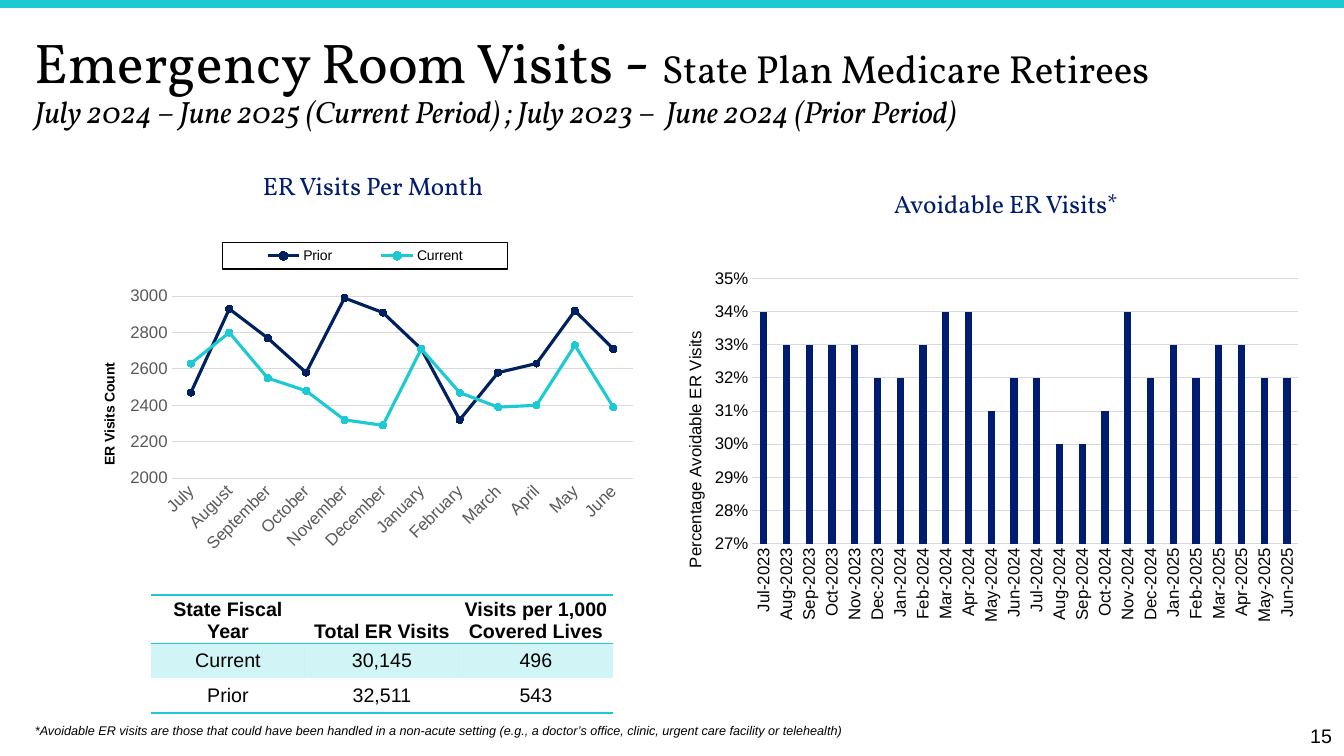
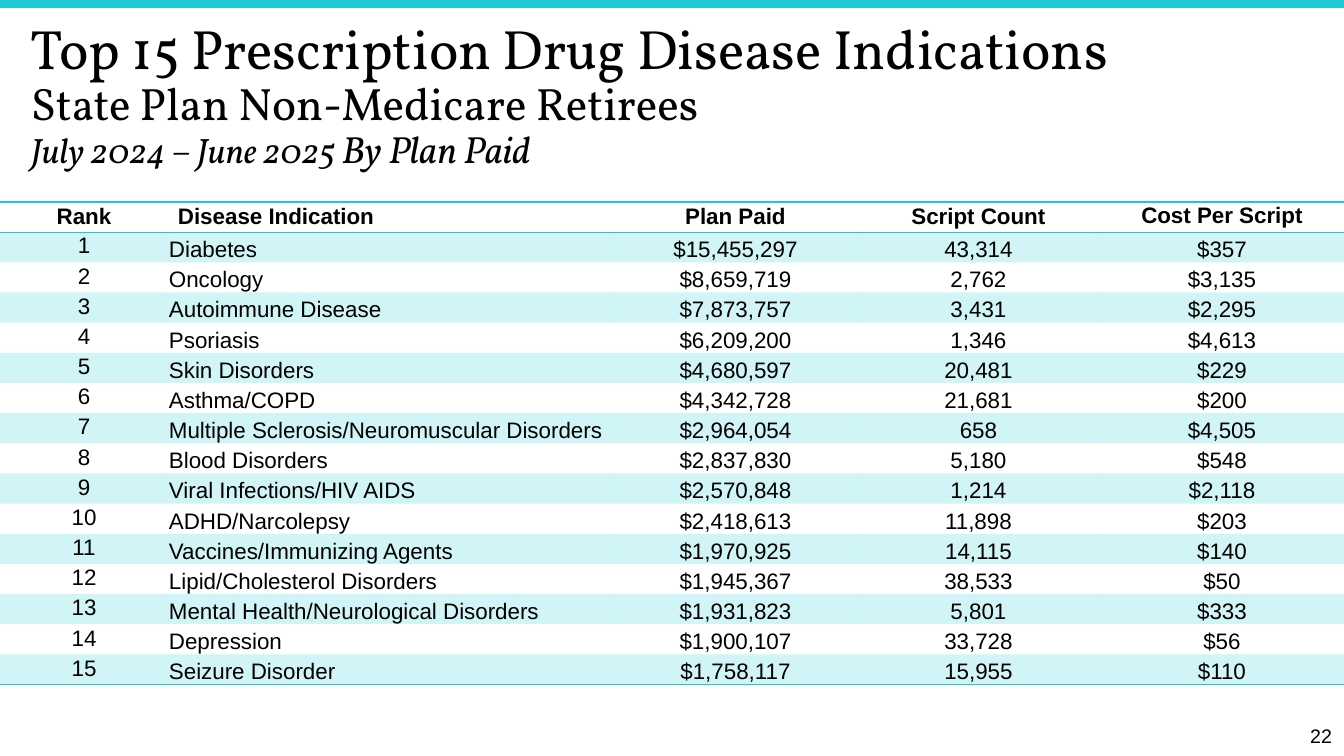
from lxml.etree import SubElement
from pptx import Presentation
from pptx.chart.data import CategoryChartData
from pptx.dml.color import RGBColor
from pptx.enum.chart import XL_CHART_TYPE, XL_LEGEND_POSITION, XL_MARKER_STYLE, XL_TICK_MARK
from pptx.enum.shapes import MSO_CONNECTOR
from pptx.enum.text import MSO_ANCHOR, PP_ALIGN
from pptx.oxml import parse_xml
from pptx.oxml.ns import nsdecls, qn
from pptx.util import Emu, Pt

SLIDE_WIDTH, SLIDE_HEIGHT = 1344, 756
SCALE = 12192000 / SLIDE_WIDTH
TEAL, NAVY, DEEP_NAVY = "1DCAD3", "001C71", "002060"
BLACK, GRAY, GRID = "000000", "595959", "D9D9D9"
BODY_FONT, TITLE_FONT = "Arial", "Vollkorn"
PLAIN_TABLE_STYLE = "{2D5ABB26-0587-4C30-8999-92F81FD0307C}"
WIDE_INSETS, TIGHT_INSETS = (10, 3, 10, 3), (1, 1, 1, 0)

MONTHS = ["July", "August", "September", "October", "November", "December",
          "January", "February", "March", "April", "May", "June"]
VISITS = [
    ("Prior", DEEP_NAVY, [2470, 2930, 2770, 2580, 2990, 2910, 2710, 2320, 2580, 2630, 2920, 2710]),
    ("Current", TEAL, [2630, 2800, 2550, 2480, 2320, 2290, 2710, 2470, 2390, 2400, 2730, 2390]),
]
AVOIDABLE_MONTHS = [f"{MONTHS[i % 12][:3]}-{2023 + (i + 6) // 12}" for i in range(24)]
AVOIDABLE_PERCENT = [34, 33, 33, 33, 33, 32, 32, 33, 34, 34, 31, 32,
                     32, 30, 30, 31, 34, 32, 33, 32, 33, 33, 32, 32]
SUMMARY = [
    ("State Fiscal Year", "Total ER Visits", "Visits per 1,000 Covered Lives"),
    ("Current", "30,145", "496"),
    ("Prior", "32,511", "543"),
]
INDICATIONS = [
    ("Diabetes", "$15,455,297", "43,314", "$357"),
    ("Oncology", "$8,659,719", "2,762", "$3,135"),
    ("Autoimmune Disease", "$7,873,757", "3,431", "$2,295"),
    ("Psoriasis", "$6,209,200", "1,346", "$4,613"),
    ("Skin Disorders", "$4,680,597", "20,481", "$229"),
    ("Asthma/COPD", "$4,342,728", "21,681", "$200"),
    ("Multiple Sclerosis/Neuromuscular Disorders", "$2,964,054", "658", "$4,505"),
    ("Blood Disorders", "$2,837,830", "5,180", "$548"),
    ("Viral Infections/HIV AIDS", "$2,570,848", "1,214", "$2,118"),
    ("ADHD/Narcolepsy", "$2,418,613", "11,898", "$203"),
    ("Vaccines/Immunizing Agents", "$1,970,925", "14,115", "$140"),
    ("Lipid/Cholesterol Disorders", "$1,945,367", "38,533", "$50"),
    ("Mental Health/Neurological Disorders", "$1,931,823", "5,801", "$333"),
    ("Depression", "$1,900,107", "33,728", "$56"),
    ("Seizure Disorder", "$1,758,117", "15,955", "$110"),
]


def px(length):
    """Turn px into EMU."""
    return Emu(round(length * SCALE))


def place(box):
    """Turn a px box into EMU."""
    return [px(length) for length in box]


def color(value):
    """Return the colour of a hex string."""
    return RGBColor.from_string(value)


def style_font(font, size, value=BLACK, name=BODY_FONT, bold=False, italic=False):
    """Set all properties of a font."""
    font.size, font.name, font.bold, font.italic = Pt(size), name, bold, italic
    font.color.rgb = color(value)


def add_run(paragraph, text, size, **style):
    """Add one styled run."""
    run = paragraph.add_run()
    run.text = text
    style_font(run.font, size, **style)


def add_text(slide, box, lines, align=PP_ALIGN.LEFT, anchor=MSO_ANCHOR.TOP, spacing=0.9):
    """Add a text box of lines, each a list of (text, size, style) runs."""
    frame = slide.shapes.add_textbox(*place(box)).text_frame
    frame.word_wrap, frame.vertical_anchor = True, anchor
    paragraph = frame.paragraphs[0]
    paragraph.alignment, paragraph.line_spacing = align, spacing
    for index, line in enumerate(lines):
        if index:
            paragraph.add_line_break()
        for text, size, style in line:
            add_run(paragraph, text, size, **style)


def add_base_slide(presentation, number, title_box, title_lines):
    """Add a slide with its top band, title and page number."""
    slide = presentation.slides.add_slide(presentation.slide_layouts[6])
    band = slide.shapes.add_connector(MSO_CONNECTOR.STRAIGHT, *place((SLIDE_WIDTH, 4, 0, 4)))
    band.line.color.rgb, band.line.width = color(TEAL), Pt(6)
    SubElement(band._element.spPr, qn("a:effectLst"))
    lines = [[(text, size, {"name": TITLE_FONT, "italic": italic}) for text, size, italic in line]
             for line in title_lines]
    add_text(slide, title_box, lines)
    add_text(slide, (1282, 725, 60, 25), [[(number, 14, {})]], PP_ALIGN.RIGHT, MSO_ANCHOR.MIDDLE)
    return slide


def rule_cell(cell, side):
    """Draw a teal line on the top (T) or bottom (B) of a cell."""
    line = parse_xml(f'<a:ln{side} {nsdecls("a")} w="12700"><a:solidFill>'
                     f'<a:srgbClr val="{TEAL}"/></a:solidFill></a:ln{side}>')
    cell._tc.get_or_add_tcPr().insert(0, line)


def fill_cell(cell, banded):
    """Tint a banded cell and clear any other."""
    if not banded:
        cell.fill.background()
        return
    cell.fill.solid()
    cell.fill.fore_color.rgb = color(TEAL)
    tint = cell._tc.tcPr.find(qn("a:solidFill")).find(qn("a:srgbClr"))
    SubElement(tint, qn("a:alpha"), val="20000")


def add_ruled_table(slide, left, top, widths, heights, rows, size, layout):
    """Add a banded table; layout gives (align, anchor, insets, spacing) of a cell."""
    box = place((left, top, sum(widths), sum(heights)))
    frame = slide.shapes.add_table(len(rows), len(widths), *box)
    table = frame.table
    table.first_row = table.horz_banding = False
    table._tbl.tblPr.find(qn("a:tableStyleId")).text = PLAIN_TABLE_STYLE
    for column, width in zip(table.columns, widths):
        column.width = px(width)
    for row, height in zip(table.rows, heights):
        row.height = px(height)
    for r, texts in enumerate(rows):
        for c, text in enumerate(texts):
            cell = table.cell(r, c)
            align, anchor, insets, spacing = layout(r, c)
            cell.vertical_anchor = anchor
            (cell.margin_left, cell.margin_top,
             cell.margin_right, cell.margin_bottom) = place(insets)
            paragraph = cell.text_frame.paragraphs[0]
            paragraph.alignment, paragraph.line_spacing = align, spacing
            add_run(paragraph, text, size, bold=r == 0)
            fill_cell(cell, r % 2 == 1)
            if r in (0, len(rows) - 1):
                rule_cell(cell, "B")
            if r == 0:
                rule_cell(cell, "T")


def set_layout(parent, index, target="", **values):
    """Give a chart part a manual layout in shares of the chart."""
    for old in parent.findall(qn("c:layout")):
        parent.remove(old)
    layout = parse_xml(f'<c:layout {nsdecls("c")}><c:manualLayout/></c:layout>')
    manual = layout[0]
    if target:
        SubElement(manual, qn("c:layoutTarget"), val=target)
    for key in ("x", "y"):
        SubElement(manual, qn(f"c:{key}Mode"), val="edge")
    for key, value in values.items():
        SubElement(manual, qn(f"c:{key}"), val=str(value))
    parent.insert(index, layout)


def style_axis(axis, label_color, rotation=0):
    """Style the labels and line of an axis."""
    axis.major_tick_mark = axis.minor_tick_mark = XL_TICK_MARK.NONE
    style_font(axis.tick_labels.font, 12, label_color)
    body = axis._element.find(qn("c:txPr")).find(qn("a:bodyPr"))
    body.set("rot", str(rotation * 60000))
    body.set("vert", "horz")


def add_chart(slide, box, kind, categories, series, label_color, rotation, scale, plot, number_format="General"):
    """Add a chart with gray grid lines and return it."""
    data = CategoryChartData(number_format=number_format)
    data.categories = categories
    for name, values in series:
        data.add_series(name, values)
    chart = slide.shapes.add_chart(kind, *place(box), data).chart
    chart.has_title = chart.has_legend = False
    style_font(chart.font, 10)
    category, value = chart.category_axis, chart.value_axis
    style_axis(category, label_color, rotation)
    style_axis(value, label_color)
    value.minimum_scale, value.maximum_scale, value.major_unit = scale
    value.tick_labels.number_format = number_format
    value.tick_labels.number_format_is_linked = False
    value.format.line.fill.background()
    value.has_major_gridlines = True
    for line in (category.format.line, value.major_gridlines.format.line):
        line.color.rgb, line.width = color(GRID), Pt(0.75)
    x, y, w, h = plot
    set_layout(chart._chartSpace.chart.plotArea, 0, "inner", x=x, y=y, w=w, h=h)
    chart.plots[0].vary_by_categories = False
    return chart


def add_axis_title(axis, text, size, bold, x, y):
    """Add an upright title beside the value axis."""
    title = axis.axis_title
    frame = title.text_frame
    add_run(frame.paragraphs[0], text, size, bold=bold)
    body = frame._txBody.find(qn("a:bodyPr"))
    body.set("rot", "-5400000")
    body.set("vert", "horz")
    set_layout(title._element, 1, x=x, y=y)


def add_boxed_legend(chart):
    """Add an outlined legend above the plot."""
    chart.has_legend = True
    legend = chart.legend
    legend.position, legend.include_in_layout = XL_LEGEND_POSITION.TOP, False
    style_font(legend.font, 10)
    outline = parse_xml(f'<c:spPr {nsdecls("c", "a")}><a:ln w="9525"><a:solidFill>'
                        f'<a:srgbClr val="{BLACK}"/></a:solidFill></a:ln></c:spPr>')
    legend._element.find(qn("c:txPr")).addprevious(outline)
    set_layout(legend._element, 1, x=0.26, y=0.03, w=0.5, h=0.08)


def add_visits_chart(slide, box):
    """Add the line chart of visits per month."""
    chart = add_chart(slide, box, XL_CHART_TYPE.LINE_MARKERS, MONTHS,
                      [(name, values) for name, _, values in VISITS],
                      GRAY, -45, (2000, 3150, 200), (0.17, 0.11, 0.81, 0.64))
    add_axis_title(chart.value_axis, "ER Visits Count", 10, True, 0.04, 0.39)
    add_boxed_legend(chart)
    for series, (_, value, _) in zip(chart.plots[0].series, VISITS):
        series.smooth = False
        series.format.line.color.rgb, series.format.line.width = color(value), Pt(2.25)
        marker = series.marker
        marker.style, marker.size = XL_MARKER_STYLE.CIRCLE, 5
        marker.format.fill.solid()
        marker.format.fill.fore_color.rgb = color(value)
        marker.format.line.color.rgb = color(value)


def add_avoidable_chart(slide, box):
    """Add the column chart of avoidable visits."""
    chart = add_chart(slide, box, XL_CHART_TYPE.COLUMN_CLUSTERED, AVOIDABLE_MONTHS,
                      [("Series 1", [percent / 100 for percent in AVOIDABLE_PERCENT])],
                      BLACK, -90, (0.27, 0.35, 0.01), (0.15, 0.07, 0.85, 0.7), "0%")
    add_axis_title(chart.value_axis, "Percentage Avoidable ER Visits", 12, False, 0.04, 0.2)
    plot = chart.plots[0]
    plot.gap_width, plot.overlap = 219, -27
    fill = plot.series[0].format.fill
    fill.solid()
    fill.fore_color.rgb = color(NAVY)


def summary_layout(row, column):
    """Return the cell layout of the summary table."""
    return PP_ALIGN.CENTER, MSO_ANCHOR.MIDDLE if row else MSO_ANCHOR.BOTTOM, TIGHT_INSETS, 1.0


def indication_layout(row, column):
    """Return the cell layout of the indication table."""
    align = PP_ALIGN.LEFT if column == 1 else PP_ALIGN.CENTER
    middle = (row > 0 and column == 0) or (row == 0 and column == 4)
    anchor = MSO_ANCHOR.MIDDLE if middle else MSO_ANCHOR.BOTTOM
    wide = row == 0 or column == 0
    return align, anchor, WIDE_INSETS if wide else TIGHT_INSETS, 0.9 if wide else 1.0


def build_visits_slide(presentation):
    """Build the emergency room slide."""
    slide = add_base_slide(presentation, "15", (25, 25, 1302, 146), [
        [("Emergency Room Visits ", 40, False), ("- ", 44, False), ("State Plan Medicare Retirees", 28, False)],
        [("July 2024 – June 2025 (Current Period) ; July 2023 –  June 2024 (Prior Period)", 22, True)],
    ])
    add_ruled_table(slide, 151, 595, [154] * 3, [44, 35, 35], SUMMARY, 14, summary_layout)
    heading = {"value": NAVY, "name": TITLE_FONT}
    for left, top, text in ((62, 169, "ER Visits Per Month"), (695, 187, "Avoidable ER Visits*")):
        add_text(slide, (left, top, 622, 65), [[(text, 18, heading)]], PP_ALIGN.CENTER)
    add_visits_chart(slide, (75, 233, 569, 327))
    add_avoidable_chart(slide, (656, 252, 643, 379))
    footnote = ("*Avoidable ER visits are those that could have been handled in a non-acute setting "
                "(e.g., a doctor’s office, clinic, urgent care facility or telehealth)")
    add_text(slide, (25, 718, 1151, 25), [[(footnote, 9, {"italic": True})]], spacing=1.0)


def build_indications_slide(presentation):
    """Build the drug indication slide."""
    slide = add_base_slide(presentation, "22", (21, 17, 1302, 146), [
        [("Top 15 Prescription Drug Disease Indications", 39.6, False)],
        [("State Plan Non-Medicare Retirees", 32.4, False)],
        [("July 2024 – June 2025 ", 25.2, True), ("By Plan Paid", 27, True)],
    ])
    rows = [("Rank", "Disease Indication", "Plan Paid", "Script Count", "Cost Per Script")]
    rows += [(str(rank), *values) for rank, values in enumerate(INDICATIONS, 1)]
    add_ruled_table(slide, 0, 202, [168, 446, 243, 243, 244], [28] * len(rows), rows, 16, indication_layout)


def main():
    """Build and save the presentation."""
    presentation = Presentation()
    presentation.slide_width, presentation.slide_height = px(SLIDE_WIDTH), px(SLIDE_HEIGHT)
    build_visits_slide(presentation)
    build_indications_slide(presentation)
    presentation.save("out.pptx")


if __name__ == "__main__":
    main()
